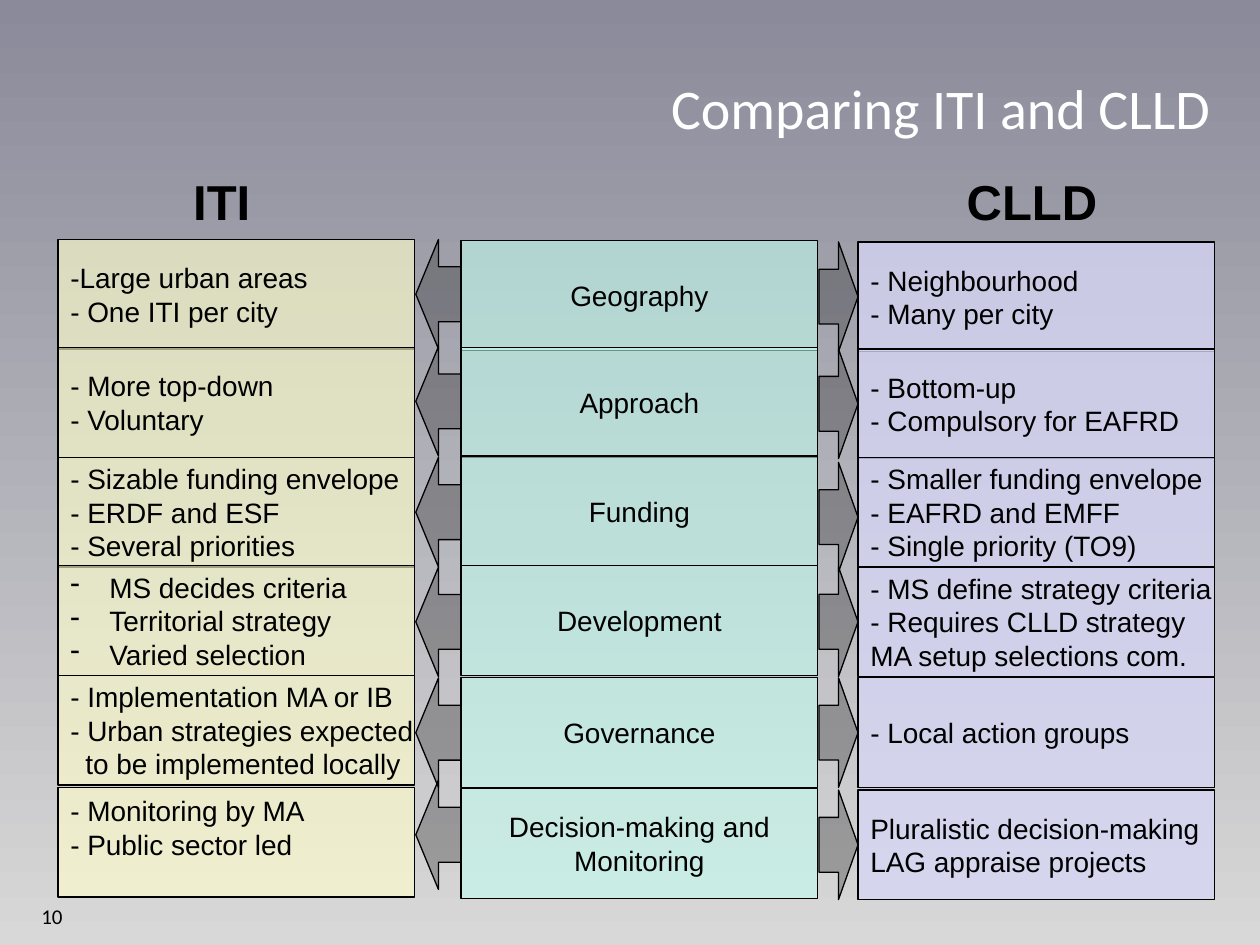
import dataclasses

import pptx
import pptx.dml.color
import pptx.enum.shapes
import pptx.enum.text
import pptx.oxml
import pptx.oxml.ns
import pptx.util

Inches = pptx.util.Inches
ALIGN = pptx.enum.text.PP_ALIGN
ANCHOR = pptx.enum.text.MSO_ANCHOR
SHAPE = pptx.enum.shapes.MSO_SHAPE


@dataclasses.dataclass(frozen=True)
class Theme:
    background_top: str = "8A8A9A"
    background_bottom: str = "D8D8D8"
    ink: str = "000000"
    title_ink: str = "FFFFFF"
    # Fills are a colour and an opacity in percent
    iti: tuple = ("FFFFCC", 63)
    topic: tuple = ("C2FFF0", 57)
    clld: tuple = ("D6D6F5", 78)
    arrow: tuple = ("262626", 33)
    body_font: str = "Arial"
    title_font: str = "Calibri"
    title_size: int = 32
    heading_size: int = 28
    body_size: int = 16
    number_size: int = 12
    line_width: float = 0.75


THEME = Theme()
BOX_WIDTH, ROW_HEIGHT = 2.83, 0.87


@dataclasses.dataclass(frozen=True)
class Line:
    text: str
    left: float = 0
    first: float = 0
    bullet: str = ""


def dashed(text):
    return Line(text, left=0.31, first=-0.31, bullet="-")


@dataclasses.dataclass(frozen=True)
class Column:
    left: float
    fill: tuple
    align: object
    tops: tuple
    cells: tuple


ITI = Column(0.46, THEME.iti, ALIGN.LEFT, (1.9, 2.76, 3.63, 4.49, 5.36, 6.25), (
    ("-Large urban areas", "- One ITI per city"),
    ("- More top-down", "- Voluntary"),
    ("- Sizable funding envelope", "- ERDF and ESF", "- Several priorities"),
    (dashed("MS decides criteria"), dashed("Territorial strategy"),
     dashed("Varied selection")),
    ("- Implementation MA or IB", "- Urban strategies expected",
     Line("to be implemented locally", left=0.12)),
    ("- Monitoring by MA", "- Public sector led"),
))
TOPICS = Column(3.66, THEME.topic, ALIGN.CENTER, (1.91, 2.76, 3.62, 4.49, 5.38, 6.26), (
    ("Geography",), ("Approach",), ("Funding",), ("Development",),
    ("Governance",), ("Decision-making and", "Monitoring"),
))
CLLD = Column(6.81, THEME.clld, ALIGN.LEFT, (1.92, 2.77, 3.63, 4.5, 5.38, 6.27), (
    ("- Neighbourhood", "- Many per city"),
    ("- Bottom-up", "- Compulsory for EAFRD"),
    ("- Smaller funding envelope", "- EAFRD and EMFF", "- Single priority (TO9)"),
    ("- MS define strategy criteria", "- Requires CLLD strategy",
     "MA setup selections com."),
    ("- Local action groups",),
    ("Pluralistic decision-making", "LAG appraise projects"),
))
ARROWS_TO_CLLD = (1.92, 2.77, 3.67, 4.5, 5.38, 6.27)
ARROWS_TO_ITI = (1.9, 2.75, 3.63, 4.5, 5.38, 6.19)


def rgb(value):
    return pptx.dml.color.RGBColor.from_string(value)


def write_text(frame, lines, *, size=THEME.body_size, font=THEME.body_font,
               color=THEME.ink, bold=False, align=ALIGN.LEFT,
               anchor=ANCHOR.TOP, wrap=True, spacing=None):
    frame.word_wrap = wrap
    frame.vertical_anchor = anchor
    for index, line in enumerate(lines):
        if isinstance(line, str):
            line = Line(line)
        paragraph = frame.paragraphs[0] if index == 0 else frame.add_paragraph()
        paragraph.alignment = align
        if spacing:
            paragraph.line_spacing = spacing
        if line.left:
            properties = paragraph._p.get_or_add_pPr()
            properties.set("marL", str(Inches(line.left)))
            properties.set("indent", str(Inches(line.first)))
            if line.bullet:
                bullet = pptx.oxml.parse_xml(
                    f'<a:buChar {pptx.oxml.ns.nsdecls("a")} char="{line.bullet}"/>')
                properties.append(bullet)
        run = paragraph.add_run()
        run.text = line.text
        run.font.size = pptx.util.Pt(size)
        run.font.name = font
        run.font.bold = bold
        run.font.color.rgb = rgb(color)


def add_shape(slide, kind, left, top, width, fill):
    shape = slide.shapes.add_shape(
        kind, Inches(left), Inches(top), Inches(width), Inches(ROW_HEIGHT))
    color, opacity = fill
    shape.shadow.inherit = False
    shape.fill.solid()
    shape.fill.fore_color.rgb = rgb(color)
    solid = shape._element.spPr.find(pptx.oxml.ns.qn("a:solidFill"))
    solid[0].append(pptx.oxml.parse_xml(
        f'<a:alpha {pptx.oxml.ns.nsdecls("a")} val="{opacity * 1000}"/>'))
    shape.line.color.rgb = rgb(THEME.ink)
    shape.line.width = pptx.util.Pt(THEME.line_width)
    return shape


def add_column(slide, column):
    for top, lines in zip(column.tops, column.cells):
        box = add_shape(slide, SHAPE.RECTANGLE, column.left, top, BOX_WIDTH, column.fill)
        # The last ITI box keeps its two lines at the top
        at_top = lines is ITI.cells[-1]
        write_text(box.text_frame, lines, align=column.align, wrap=False,
                   anchor=ANCHOR.TOP if at_top else ANCHOR.MIDDLE)


def add_arrows(slide, left, width, tops, rotation=0):
    for top in tops:
        arrow = add_shape(slide, SHAPE.RIGHT_ARROW, left, top, width, THEME.arrow)
        arrow.rotation = rotation


def add_label(slide, text, left, top, width, height, **text_format):
    label = slide.shapes.add_textbox(
        Inches(left), Inches(top), Inches(width), Inches(height))
    write_text(label.text_frame, [text], **text_format)


def set_background(slide):
    fill = slide.background.fill
    fill.gradient()
    fill.gradient_angle = 270
    colors = (THEME.background_top, THEME.background_bottom)
    for position, (stop, color) in enumerate(zip(fill.gradient_stops, colors)):
        stop.position = position
        stop.color.rgb = rgb(color)


def set_title(slide, text):
    title = slide.shapes.title
    title.left, title.top = Inches(2.01), Inches(0.62)
    title.width, title.height = Inches(7.8), Inches(0.54)
    title.text_frame.margin_right = Inches(0.2)
    title.text_frame.auto_size = pptx.enum.text.MSO_AUTO_SIZE.SHAPE_TO_FIT_TEXT
    write_text(title.text_frame, [text], size=THEME.title_size, font=THEME.title_font,
               color=THEME.title_ink, align=ALIGN.RIGHT, anchor=ANCHOR.BOTTOM,
               spacing=0.8)


def main():
    presentation = pptx.Presentation()
    presentation.slide_width, presentation.slide_height = Inches(10), Inches(7.5)
    slide = presentation.slides.add_slide(presentation.slide_layouts[5])
    set_background(slide)
    set_title(slide, "Comparing ITI and CLLD")

    # Comparison columns and the arrows leading out from the topics
    for column in (TOPICS, CLLD, ITI):
        add_column(slide, column)
    add_arrows(slide, 6.5, 0.31, ARROWS_TO_CLLD)
    add_arrows(slide, 3.3, 0.36, ARROWS_TO_ITI, rotation=180)

    # Column headings
    for heading, left in (("ITI", 1.09), ("CLLD", 7.52)):
        add_label(slide, heading, left, 1.31, 1.34, 0.57,
                  size=THEME.heading_size, bold=True, align=ALIGN.CENTER)

    # Slide number
    add_label(slide, "10", 0.23, 7.12, 0.83, 0.33,
              size=THEME.number_size, font=THEME.title_font)
    presentation.save("out.pptx")


if __name__ == "__main__":
    main()
